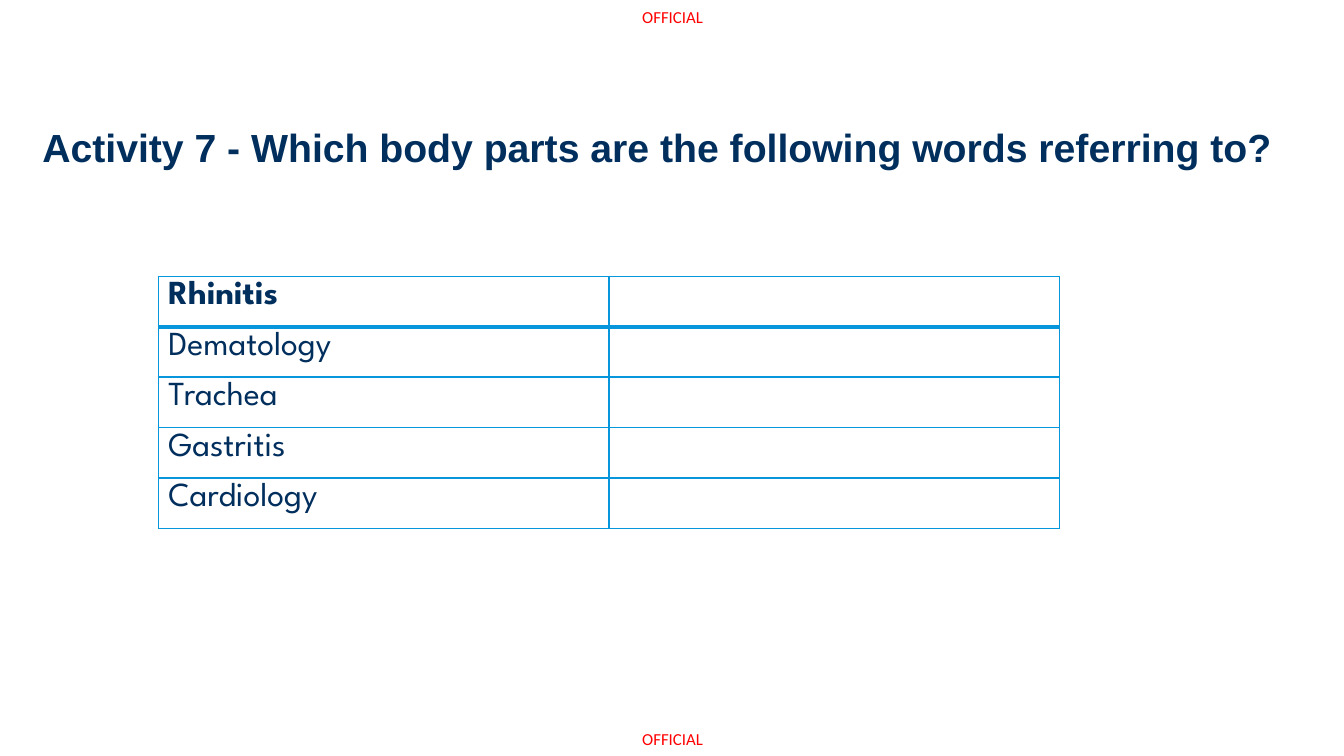
import pptx
import pptx.dml.color
import pptx.util
import pptx.oxml
import pptx.oxml.ns
import lxml.etree

SLIDE_W, SLIDE_H = 13.33, 7.5
NAVY, BLUE, RED, WHITE = "002E5D", "0796DC", "FF0000", "FFFFFF"
WORDS = ["Rhinitis", "Dematology", "Trachea", "Gastritis", "Cardiology"]


def colour(hex_code):
    return pptx.dml.color.RGBColor.from_string(hex_code)


def inches(*lengths):
    return [pptx.util.Inches(length) for length in lengths]


def write(frame, text, font, size, hex_code, bold=False, spacing=None):
    paragraph = frame.paragraphs[0]
    if spacing:
        paragraph.line_spacing = spacing
    run = paragraph.add_run()
    run.text = text
    run.font.name = font
    run.font.size = pptx.util.Pt(size)
    run.font.bold = bold
    run.font.color.rgb = colour(hex_code)


def add_label(slide, box, text, wrap=False, **text_format):
    frame = slide.shapes.add_textbox(*inches(*box)).text_frame
    frame.margin_left = frame.margin_right = 0
    frame.margin_top = frame.margin_bottom = 0
    frame.word_wrap = wrap
    write(frame, text, **text_format)


def style_cell(cell, bottom_width):
    """White fill with blue rules on all four sides."""
    properties = cell._tc.get_or_add_tcPr()
    for side in ("L", "R", "T", "B"):
        width = bottom_width if side == "B" else 1
        rule = lxml.etree.SubElement(
            properties, pptx.oxml.ns.qn(f"a:ln{side}"), w=str(pptx.util.Pt(width)))
        fill = lxml.etree.SubElement(rule, pptx.oxml.ns.qn("a:solidFill"))
        lxml.etree.SubElement(fill, pptx.oxml.ns.qn("a:srgbClr"), val=BLUE)
    cell.fill.solid()
    cell.fill.fore_color.rgb = colour(WHITE)


def add_word_table(slide, box, words):
    left, top, width, height = box
    table = slide.shapes.add_table(len(words), 2, *inches(left, top, width, height)).table
    for column in table.columns:
        column.width = pptx.util.Inches(width / 2)
    for index, word in enumerate(words):
        heading = index == 0
        write(table.cell(index, 0).text_frame, word, font="League Spartan",
              size=24, hex_code=NAVY, bold=heading)
        for cell in table.rows[index].cells:
            style_cell(cell, bottom_width=3 if heading else 1)
        if index == 1:
            for cell in table.rows[index].cells:
                top_rule = cell._tc.tcPr.find(pptx.oxml.ns.qn("a:lnT"))
                top_rule.set("w", str(pptx.util.Pt(3)))


def build_activity(slide):
    # Classification marks at the top and bottom edges
    for top in (0.07, SLIDE_H - 0.27):
        add_label(slide, (6.37, top, 0.64, 0.2), "OFFICIAL",
                  font="Calibri", size=12, hex_code=RED)
    # Question
    add_label(slide, (0.42, 1.28, 13.16, 0.79),
              "Activity 7 - Which body parts are the following words referring to?",
              wrap=True, font="Arial", size=28, hex_code=NAVY, bold=True, spacing=0.9)
    # Words with blank answer cells
    add_word_table(slide, (1.57, 2.74, 8.94, 0.41 * len(WORDS)), WORDS)


def main():
    deck = pptx.Presentation()
    deck.slide_width, deck.slide_height = inches(SLIDE_W, SLIDE_H)
    build_activity(deck.slides.add_slide(deck.slide_layouts[6]))
    deck.save("out.pptx")


if __name__ == "__main__":
    main()
